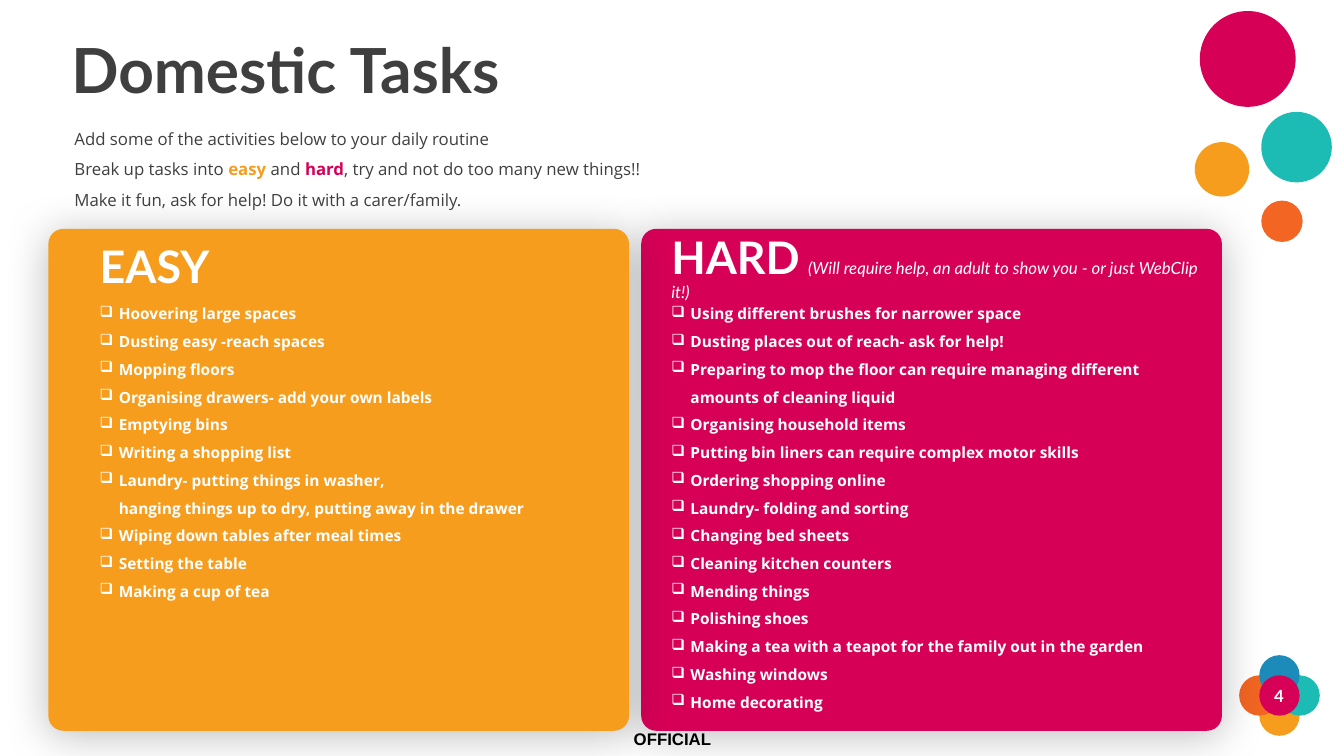
from lxml.etree import SubElement
from pptx import Presentation
from pptx.dml.color import RGBColor
from pptx.enum.shapes import MSO_SHAPE
from pptx.enum.text import MSO_ANCHOR, PP_ALIGN
from pptx.oxml.ns import qn
from pptx.util import Pt

PX = 9144  # EMU per px, 100 px to the inch
WHITE, BLACK, GREY = "FFFFFF", "000000", "3F3F3F"
PINK, AMBER, TEAL, ORANGE, BLUE = "D60057", "F79D1E", "1CBBB4", "F26522", "1C8BBA"

INTRO = [
    [("Add some of the activities below to your daily routine", {})],
    [("Break up tasks into ", {}),
     ("easy", {"color": AMBER, "bold": True}),
     (" and ", {}),
     ("hard", {"color": PINK, "bold": True}),
     (", try and not do too many new things!!\n"
      "Make it fun, ask for help! Do it with a carer/family.", {})],
]
EASY_TASKS = [
    "Hoovering large spaces",
    "Dusting easy -reach spaces",
    "Mopping floors",
    "Organising drawers- add your own labels",
    "Emptying bins",
    "Writing a shopping list",
    "Laundry- putting things in washer,\nhanging things up to dry, putting away in the drawer",
    "Wiping down tables after meal times",
    "Setting the table",
    "Making a cup of tea",
]
HARD_TASKS = [
    "Using different brushes for narrower space",
    "Dusting places out of reach- ask for help!",
    "Preparing to mop the floor can require managing different amounts of cleaning liquid",
    "Organising household items",
    "Putting bin liners can require complex motor skills",
    "Ordering shopping online",
    "Laundry- folding and sorting",
    "Changing bed sheets",
    "Cleaning kitchen counters",
    "Mending things",
    "Polishing shoes",
    "Making a tea with a teapot for the family out in the garden",
    "Washing windows",
    "Home decorating",
]
EASY_HEADING = [("EASY", {})]
HARD_HEADING = [
    ("HARD", {}),
    (" ", {"size": 24}),
    ("(Will require help, an adult to show you - or just WebClip it!)",
     {"size": 12, "bold": False, "italic": True}),
]


def rgb(color):
    return RGBColor.from_string(color)


def emu(*lengths):
    return [length * PX for length in lengths]


def add_filled(slide, kind, box, color):
    shape = slide.shapes.add_shape(kind, *emu(*box))
    shape.shadow.inherit = False
    shape.fill.solid()
    shape.fill.fore_color.rgb = rgb(color)
    shape.line.fill.background()
    return shape


def add_circle(slide, left, top, size, color):
    add_filled(slide, MSO_SHAPE.OVAL, (left, top, size, size), color)


def set_font(font, values):
    for name, value in values.items():
        if name == "color":
            font.color.rgb = rgb(value)
        else:
            setattr(font, name, Pt(value) if name == "size" else value)


def add_text(slide, box, paragraphs, font, layout, anchor=MSO_ANCHOR.TOP):
    """Each paragraph is a list of (text, font changes); a newline is a line break."""
    frame = slide.shapes.add_textbox(*emu(*box)).text_frame
    frame.word_wrap = True
    frame.vertical_anchor = anchor
    for index, runs in enumerate(paragraphs):
        paragraph = frame.paragraphs[0] if index == 0 else frame.add_paragraph()
        for name, value in layout.items():
            setattr(paragraph, name, value)
        for text, changes in runs:
            for number, line in enumerate(text.split("\n")):
                if number:
                    paragraph.add_line_break()
                run = paragraph.add_run()
                run.text = line
                set_font(run.font, font | changes)
    return frame


def add_soft_shadow(shape):
    effects = shape._element.spPr.find(qn("a:effectLst"))
    shadow = SubElement(effects, qn("a:outerShdw"), blurRad=str(Pt(31)), dist=str(Pt(4)),
                        dir="5400000", algn="t", rotWithShape="0")
    color = SubElement(shadow, qn("a:srgbClr"), val=BLACK)
    SubElement(color, qn("a:alpha"), val="25000")


def add_checkboxes(frame, indent):
    for paragraph in frame.paragraphs:
        properties = paragraph._p.get_or_add_pPr()
        properties.set("marL", str(indent * PX))
        properties.set("indent", str(-indent * PX))
        SubElement(properties, qn("a:buChar"), char="❑")


def add_task_card(slide, box, color, heading, tasks, margin):
    left, top, width, height = box
    card = add_filled(slide, MSO_SHAPE.ROUNDED_RECTANGLE, box, color)
    card.adjustments[0] = 0.03
    add_soft_shadow(card)
    text_left, text_width = left + margin, width - margin
    frame = add_text(slide, (text_left, top + 61, text_width - 13, height - 74),
                     [[(task, {})] for task in tasks],
                     {"name": "Open Sans", "size": 11, "bold": True, "color": WHITE},
                     {"line_spacing": 1.5})
    add_checkboxes(frame, 19)
    add_text(slide, (text_left, top - 1, text_width, 81), [heading],
             {"name": "Lato", "size": 32, "bold": True, "color": WHITE},
             {"line_spacing": 0.9, "space_before": Pt(10)}, MSO_ANCHOR.MIDDLE)


def add_introduction(slide, left, top):
    add_text(slide, (left, top, 535, 81), [[("Domestic Tasks", {})]],
             {"name": "Lato", "size": 44.4, "bold": True, "color": GREY},
             {"line_spacing": 0.9, "space_before": Pt(10)}, MSO_ANCHOR.MIDDLE)
    add_text(slide, (left + 3, top + 81, 1042, 101), INTRO,
             {"name": "Open Sans", "size": 12, "bold": False, "color": GREY},
             {"line_spacing": 1.5})


def add_bubbles(slide, left, top):
    for x, y, size, color in [(5, 0, 95, PINK), (66, 100, 70, TEAL),
                              (0, 130, 54, AMBER), (66, 188, 41, ORANGE)]:
        add_circle(slide, left + x, top + y, size, color)


def add_page_flower(slide, left, top, size, number):
    """Four petals, half a petal apart, around a numbered centre."""
    step = size // 2
    for column, row, color in [(1, 2, AMBER), (2, 1, TEAL), (0, 1, ORANGE),
                               (1, 0, BLUE), (1, 1, PINK)]:
        add_circle(slide, left + column * step, top + row * step, size, color)
    add_text(slide, (left + 13, top + 25, 53, 30), [[(number, {})]],
             {"name": "Lato", "size": 12, "bold": True, "color": WHITE},
             {"alignment": PP_ALIGN.CENTER})


def add_marking(slide, box):
    add_text(slide, box, [[("OFFICIAL", {})]],
             {"name": "Arial", "size": 12, "bold": True, "color": BLACK},
             {"alignment": PP_ALIGN.CENTER})


def main():
    presentation = Presentation()
    presentation.slide_width, presentation.slide_height = emu(1333, 750)
    slide = presentation.slides.add_slide(presentation.slide_layouts[6])
    add_page_flower(slide, 1229, 650, 40, "4")
    add_task_card(slide, (636, 227, 576, 498), PINK, HARD_HEADING, HARD_TASKS, 20)
    add_task_card(slide, (48, 227, 576, 498), AMBER, EASY_HEADING, EASY_TASKS, 41)
    add_introduction(slide, 61, 32)
    add_bubbles(slide, 1185, 11)
    add_marking(slide, (14, 718, 1306, 30))
    presentation.save("out.pptx")


if __name__ == "__main__":
    main()
